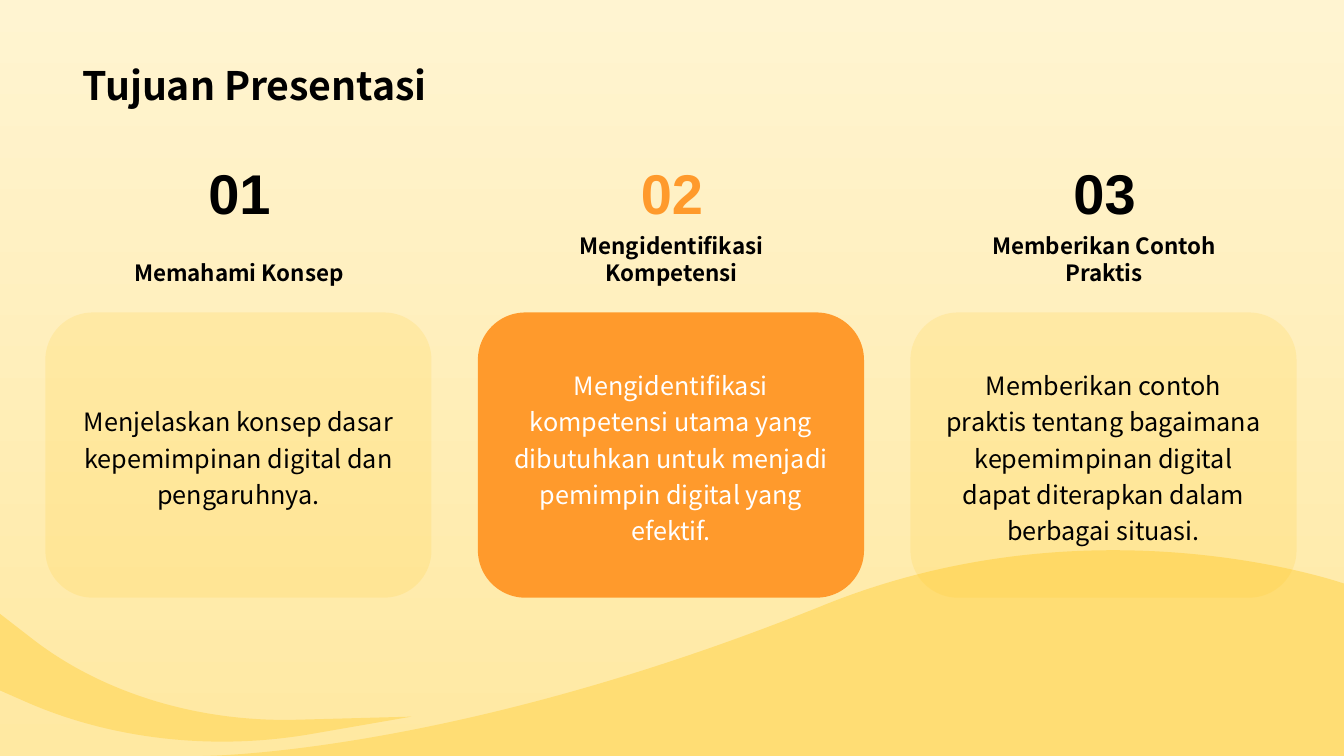
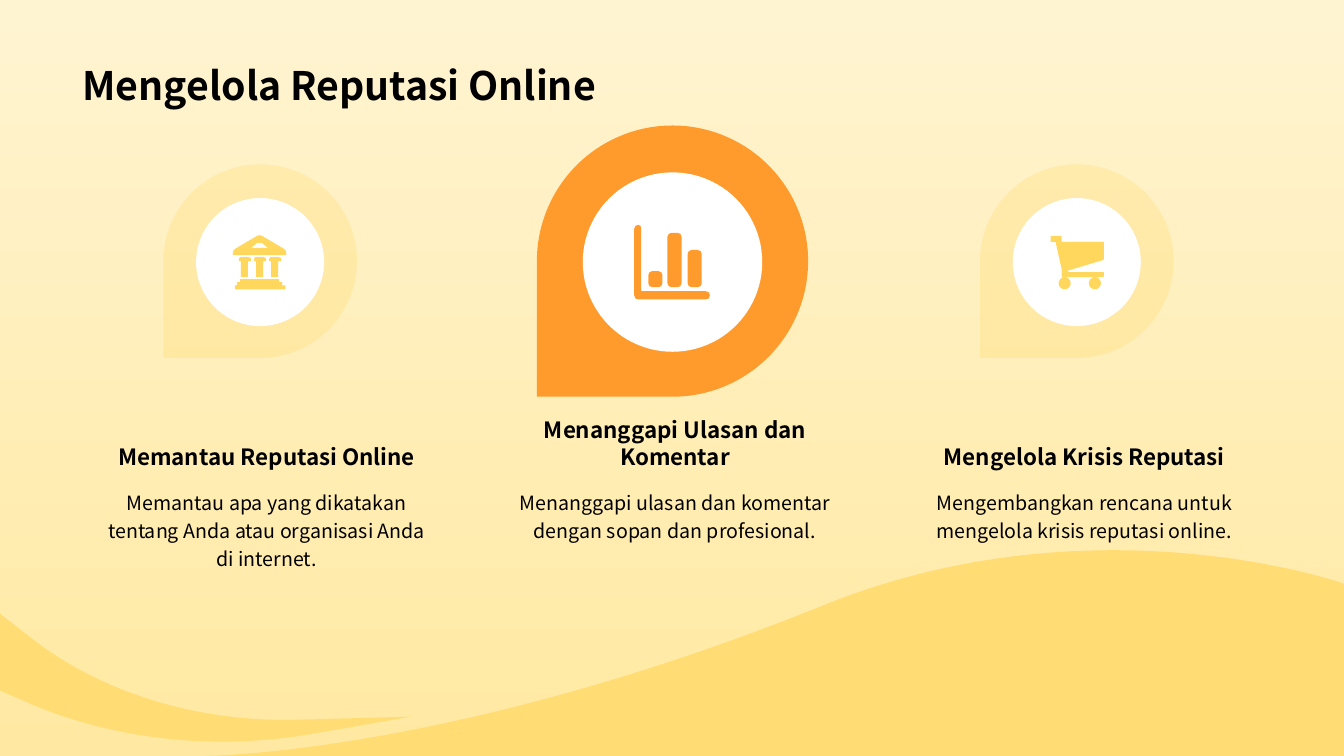
from lxml import etree
from pptx import Presentation
from pptx.dml.color import RGBColor
from pptx.enum import shapes, text
from pptx.oxml import ns
from pptx.util import Inches, Pt

BLACK = RGBColor(0x00, 0x00, 0x00)
WHITE = RGBColor(0xFF, 0xFF, 0xFF)
ORANGE = RGBColor(0xFF, 0x9A, 0x2C)
AMBER = RGBColor(0xFF, 0xC7, 0x17)
WAVE = RGBColor(0xFF, 0xDD, 0x74)
SKY_LOW = RGBColor(0xFF, 0xE9, 0xA2)
SKY_HIGH = RGBColor(0xFF, 0xF4, 0xD1)
BODY_FONT = "Noto Sans CJK SC"
NUMBER_FONT = "Arial"

SHAPE = shapes.MSO_SHAPE
ANCHOR = text.MSO_ANCHOR
CENTER = text.PP_ALIGN.CENTER
GROW = text.MSO_AUTO_SIZE.SHAPE_TO_FIT_TEXT

RIGHT_WAVE = [(8.18, 6), (10.86, 4.92, 13.33, 5.79, 13.33, 5.79), (13.33, 7.5),
              (2.01, 7.5), (2.01, 7.5, 4.47, 7.5, 8.18, 6)]
LEFT_WAVE = [(0, 6.09), (0.31, 6.33), (1, 6.87, 1.96, 7.17, 2.96, 7.14), (4.08, 7.11),
             (3.1, 7.28), (2.13, 7.45, 1.11, 7.34, 0.25, 6.96), (0, 6.85)]

CARDS = [
    ("01", "Memahami Konsep",
     "Menjelaskan konsep dasar kepemimpinan digital dan pengaruhnya."),
    ("02", "Mengidentifikasi Kompetensi",
     "Mengidentifikasi kompetensi utama yang dibutuhkan untuk menjadi pemimpin digital yang efektif."),
    ("03", "Memberikan Contoh Praktis",
     "Memberikan contoh praktis tentang bagaimana kepemimpinan digital dapat diterapkan dalam berbagai situasi."),
]


def paint(shape, color, opacity=100):
    shape.shadow.inherit = False
    shape.fill.solid()
    shape.fill.fore_color.rgb = color
    shape.line.fill.background()
    if opacity < 100:
        tint = shape.element.spPr.find(".//" + ns.qn("a:srgbClr"))
        etree.SubElement(tint, ns.qn("a:alpha"), val=str(opacity * 1000))


def write(box, words, size=16, color=BLACK, bold=False, font=BODY_FONT, align=CENTER,
          anchor=ANCHOR.TOP, spacing=None, wrap=True, fit=None):
    frame = box.text_frame
    frame.word_wrap = wrap
    frame.vertical_anchor = anchor
    if fit is not None:
        frame.auto_size = fit
    para = frame.paragraphs[0]
    para.alignment = align
    para.line_spacing = spacing
    span = para.add_run()
    span.text = words
    span.font.name = font
    span.font.size = Pt(size)
    span.font.bold = bold
    span.font.color.rgb = color


def add_text(page, left, top, width, height, words, **style):
    box = page.shapes.add_textbox(Inches(left), Inches(top), Inches(width), Inches(height))
    write(box, words, **style)


def add_heading(page, left, top, width, words):
    add_text(page, left, top, width, 0.37, words, bold=True, anchor=ANCHOR.BOTTOM, fit=GROW)


def add_centered(page, kind, center, middle, size, color, opacity=100):
    shape = page.shapes.add_shape(kind, Inches(center - size / 2), Inches(middle - size / 2),
                                  Inches(size), Inches(size))
    paint(shape, color, opacity)
    return shape


def trace(contour, steps=40):
    points = [contour[0]]
    for segment in contour[1:]:
        if len(segment) == 2:
            points.append(segment)
            continue
        x0, y0 = points[-1]
        x1, y1, x2, y2, x3, y3 = segment
        for step in range(1, steps + 1):
            t = step / steps
            a, b, c, d = (1 - t) ** 3, 3 * t * (1 - t) ** 2, 3 * t * t * (1 - t), t ** 3
            points.append((a * x0 + b * x1 + c * x2 + d * x3,
                           a * y0 + b * y1 + c * y2 + d * y3))
    return points


def add_command(outline, name, coordinates, left, top):
    command = etree.SubElement(outline, ns.qn(name))
    for x, y in zip(coordinates[::2], coordinates[1::2]):
        etree.SubElement(command, ns.qn("a:pt"), x=str(Inches(x - left)), y=str(Inches(y - top)))


def add_outline(page, contours, color, opacity=100):
    xs, ys = zip(*(point for contour in contours for point in trace(contour)))
    left, top, right, bottom = min(xs), min(ys), max(xs), max(ys)
    builder = page.shapes.build_freeform(Inches(left), Inches(top))
    builder.add_line_segments([(Inches(right), Inches(top)), (Inches(right), Inches(bottom))])
    shape = builder.convert_to_shape()
    outline = shape.element.spPr.find(".//" + ns.qn("a:path"))
    for command in list(outline):
        outline.remove(command)
    for start, *segments in contours:
        add_command(outline, "a:moveTo", start, left, top)
        for segment in segments:
            name = "a:lnTo" if len(segment) == 2 else "a:cubicBezTo"
            add_command(outline, name, segment, left, top)
        etree.SubElement(outline, ns.qn("a:close"))
    paint(shape, color, opacity)
    return shape


def rounded(left, top, width, height, radius):
    right, bottom = left + width, top + height
    bend = radius * 0.45
    return [
        (left + radius, top), (right - radius, top),
        (right - bend, top, right, top + bend, right, top + radius),
        (right, bottom - radius),
        (right, bottom - bend, right - bend, bottom, right - radius, bottom),
        (left + radius, bottom),
        (left + bend, bottom, left, bottom - bend, left, bottom - radius),
        (left, top + radius),
        (left, top + bend, left + bend, top, left + radius, top),
    ]


def bank_icon():
    base = [(2.38, 2.77), (2.77, 2.77), (2.77, 2.8), (2.8, 2.8), (2.8, 2.83), (2.83, 2.83),
            (2.83, 2.87), (2.33, 2.87), (2.33, 2.83), (2.35, 2.83), (2.35, 2.8), (2.38, 2.8)]
    column = [(0.02, 2.55), (0.09, 2.55), (0.11, 2.55, 0.12, 2.56, 0.12, 2.57), (0.12, 2.59),
              (0.09, 2.59), (0.09, 2.75), (0.02, 2.75), (0.02, 2.59), (0, 2.59), (0, 2.57),
              (0, 2.56, 0.01, 2.55, 0.02, 2.55)]
    columns = [[tuple(value + left if index % 2 == 0 else value
                      for index, value in enumerate(segment)) for segment in column]
               for left in (2.37, 2.52, 2.67)]
    gable = [(2.55, 2.41), (2.49, 2.46), (2.66, 2.46), (2.6, 2.41),
             (2.58, 2.41, 2.57, 2.41, 2.55, 2.41)]
    roof = [(2.55, 2.34), (2.57, 2.33, 2.58, 2.33, 2.6, 2.34), (2.82, 2.47),
            (2.83, 2.48, 2.84, 2.49, 2.84, 2.51), (2.84, 2.53), (2.31, 2.53), (2.31, 2.51),
            (2.31, 2.49, 2.32, 2.48, 2.33, 2.47)]
    return [base, *columns, gable, roof]


def chart_icon():
    axes = [(7, 2.97), (6.33, 2.97), (6.31, 2.97, 6.29, 2.96, 6.29, 2.93), (6.29, 2.27),
            (6.29, 2.25, 6.31, 2.23, 6.33, 2.23), (6.35, 2.23, 6.36, 2.25, 6.36, 2.27),
            (6.36, 2.89), (7, 2.89), (7.03, 2.89, 7.04, 2.91, 7.04, 2.93),
            (7.04, 2.96, 7.03, 2.97, 7, 2.97)]
    bars = [rounded(left, top, 0.14, 2.85 - top, 0.04)
            for left, top in ((6.43, 2.69), (6.62, 2.31), (6.82, 2.48))]
    return [axes, *bars]


def cart_icon():
    wheels = [rounded(left, 2.75, 0.12, 0.12, 0.06) for left in (10.5, 10.8)]
    basket = [(10.61, 2.68), (10.94, 2.58), (10.95, 2.58, 10.95, 2.57, 10.95, 2.56),
              (10.95, 2.4), (10.53, 2.4), (10.53, 2.35), (10.52, 2.34), (10.43, 2.34),
              (10.42, 2.35), (10.42, 2.4), (10.47, 2.4), (10.53, 2.67), (10.53, 2.74),
              (10.54, 2.75), (10.94, 2.75), (10.95, 2.74), (10.95, 2.7), (10.62, 2.7),
              (10.58, 2.7, 10.58, 2.68, 10.61, 2.68)]
    return [*wheels, basket]


def dress_layout(layout, page):
    sky = layout.background.fill
    sky.gradient()
    sky.gradient_angle = 90
    for stop, color in zip(sky.gradient_stops, (SKY_LOW, SKY_HIGH)):
        stop.color.rgb = color
    for number, outline in enumerate((RIGHT_WAVE, LEFT_WAVE), start=101):
        wave = add_outline(page, [outline], WAVE).element
        wave.nvSpPr.cNvPr.set("id", str(number))
        layout.shapes.element.append(wave)


def add_title(page, title):
    add_text(page, 0.72, 0.14, 11.88, 0.98, title, size=28, bold=True,
             align=text.PP_ALIGN.LEFT, anchor=ANCHOR.BOTTOM)


def add_card(page, left, number, heading, words, featured):
    card = page.shapes.add_shape(SHAPE.ROUNDED_RECTANGLE, Inches(left), Inches(3.1),
                                 Inches(3.83), Inches(2.83))
    paint(card, ORANGE if featured else AMBER, 100 if featured else 15)
    card.text_frame.margin_left = card.text_frame.margin_right = Inches(0.2)
    write(card, words, size=18, color=WHITE if featured else BLACK,
          anchor=ANCHOR.MIDDLE, spacing=1.2)
    add_text(page, left + 1.51, 1.52, 0.83, 0.77, number, size=40, bold=True,
             font=NUMBER_FONT, color=ORANGE if featured else BLACK,
             anchor=ANCHOR.BOTTOM, wrap=False)
    add_heading(page, left + 0.36, 2.52, 3.12, heading)


def add_topic(page, left, center, heading, words, icon, featured=False):
    drop_size, disc_size = (2.69, 1.78) if featured else (1.92, 1.27)
    color = ORANGE if featured else AMBER
    drop = add_centered(page, SHAPE.TEAR, center, 2.59, drop_size, color,
                        100 if featured else 15)
    drop.rotation = 180
    add_centered(page, SHAPE.OVAL, center, 2.6, disc_size, WHITE)
    add_outline(page, icon, color, 100 if featured else 70)
    add_heading(page, left, 4.34, 3.51, heading)
    add_text(page, left, 4.77, 3.51, 1.06, words, size=14, spacing=1.2)


def main():
    deck = Presentation()
    deck.slide_width, deck.slide_height = Inches(13.33), Inches(7.5)
    layout = deck.slide_layouts[6]

    goals = deck.slides.add_slide(layout)
    dress_layout(layout, goals)
    add_title(goals, "Tujuan Presentasi")
    for index, card in enumerate(CARDS):
        add_card(goals, 0.45 + 4.29 * index, *card, featured=index == 1)

    reputation = deck.slides.add_slide(layout)
    add_title(reputation, "Mengelola Reputasi Online")
    add_topic(reputation, 0.89, 2.58, "Memantau Reputasi Online",
              "Memantau apa yang dikatakan tentang Anda atau organisasi Anda di internet.",
              bank_icon())
    add_topic(reputation, 4.94, 6.67, "Menanggapi Ulasan dan Komentar",
              "Menanggapi ulasan dan komentar dengan sopan dan profesional.",
              chart_icon(), featured=True)
    add_topic(reputation, 9, 10.68, "Mengelola Krisis Reputasi",
              "Mengembangkan rencana untuk mengelola krisis reputasi online.", cart_icon())

    deck.save("out.pptx")


if __name__ == "__main__":
    main()
